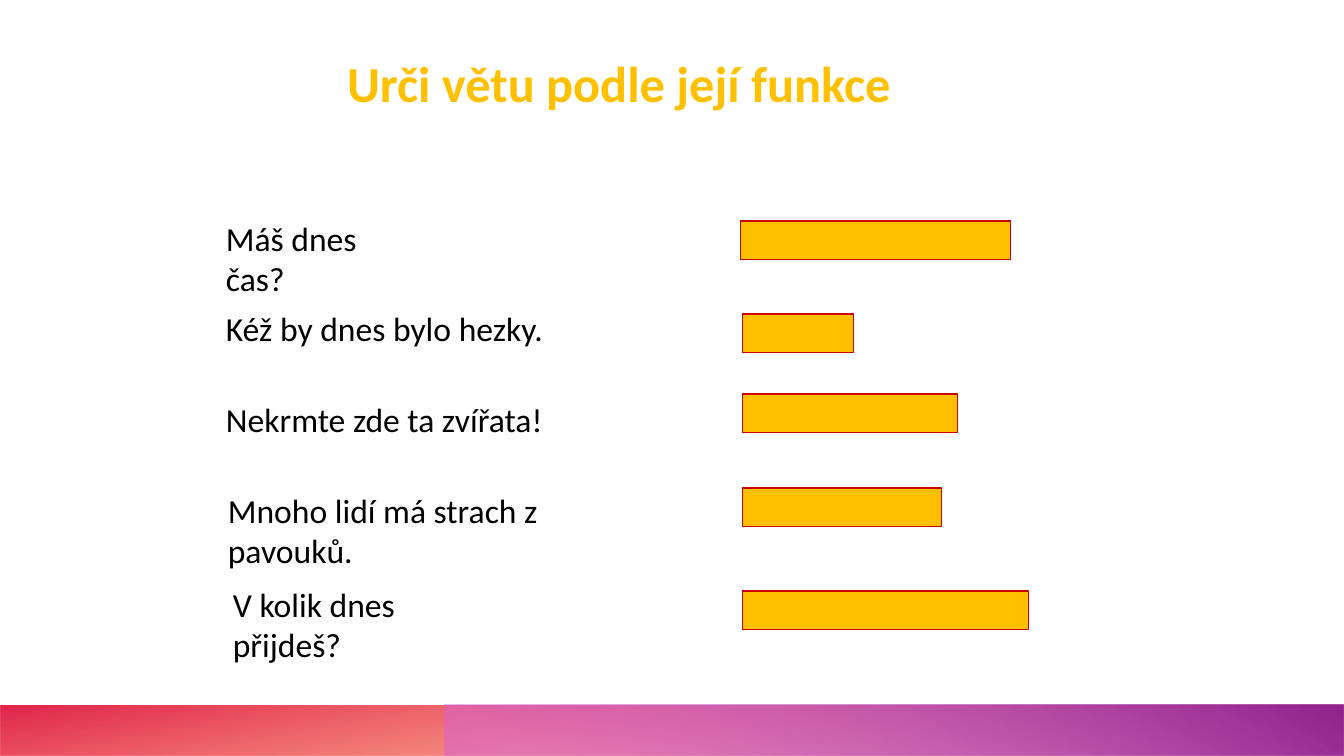
from pptx import Presentation
from pptx.dml.color import RGBColor
from pptx.enum.shapes import MSO_SHAPE
from pptx.enum.text import MSO_ANCHOR, PP_ALIGN
from pptx.oxml import parse_xml
from pptx.oxml.ns import nsdecls, qn
from pptx.util import Pt

RECTANGLE = MSO_SHAPE.RECTANGLE
TOP = MSO_ANCHOR.TOP
LEFT = PP_ALIGN.LEFT
SCALE = 12192000 / 1344


def px(*lengths):
    return [round(length * SCALE) for length in lengths]


def color(value):
    return RGBColor.from_string(value)


presentation = Presentation()
presentation.slide_width, presentation.slide_height = px(1344, 756)
slide = presentation.slides.add_slide(presentation.slide_layouts[5])

footer_bands = [
    (0, 1344, 180, 100, [(14, "FE4A00", 28), (100, "DA002F", 85)]),
    (445, 899, 0, 240, [(9, "D861D4", 55), (99, "92248E", 100)]),
]
for left, width, rotation, angle, stops in footer_bands:
    band = slide.shapes.add_shape(RECTANGLE, *px(left, 705, width, 51))
    band.shadow.inherit = False
    band.line.fill.background()
    band.rotation = rotation
    band.fill.background()
    properties = band._element.spPr
    properties.find(qn("a:xfrm")).set("flipH", "1")
    stop_xml = "".join(
        f'<a:gs pos="{position * 1000}"><a:srgbClr val="{value}">'
        f'<a:alpha val="{opacity * 1000}"/></a:srgbClr></a:gs>'
        for position, value, opacity in stops
    )
    gradient = parse_xml(
        f'<a:gradFill {nsdecls("a")} rotWithShape="1"><a:gsLst>{stop_xml}</a:gsLst>'
        f'<a:lin ang="{angle * 60000}" scaled="0"/></a:gradFill>'
    )
    properties.replace(properties.find(qn("a:noFill")), gradient)

answer_bars = [
    (741, 221, 270),
    (743, 314, 111),
    (743, 394, 215),
    (743, 488, 199),
    (743, 591, 286),
]
for left, top, width in answer_bars:
    bar = slide.shapes.add_shape(RECTANGLE, *px(left, top, width, 39))
    bar.shadow.inherit = False
    bar.fill.solid()
    bar.fill.fore_color.rgb = color("FFC000")
    bar.line.color.rgb = color("CC0000")
    bar.line.width = Pt(0.75)

title = slide.shapes.title
texts = [(title, "Urči větu podle její funkce", (337, 47, 571, 72), 36, "FFC000", True)]
sentences = [
    ("Máš dnes čas?", 216, 213, 210),
    ("Kéž by dnes bylo hezky.", 216, 303, 347),
    ("Nekrmte zde ta zvířata!", 216, 394, 345),
    ("Mnoho lidí má strach z pavouků.", 218, 485, 452),
    ("V kolik dnes přijdeš?", 223, 579, 294),
]
for sentence, left, top, width in sentences:
    place = (left, top, width, 50)
    box = slide.shapes.add_textbox(*px(*place))
    texts.append((box, sentence, place, 24, "000000", False))

for shape, text, place, size, text_color, bold in texts:
    shape.left, shape.top, shape.width, shape.height = px(*place)
    frame = shape.text_frame
    frame.text = text
    frame.word_wrap = True
    frame.vertical_anchor = TOP
    paragraph = frame.paragraphs[0]
    paragraph.alignment = LEFT
    font = paragraph.runs[0].font
    font.name = "Calibri"
    font.size = Pt(size)
    font.bold = bold
    font.color.rgb = color(text_color)

presentation.save("out.pptx")
